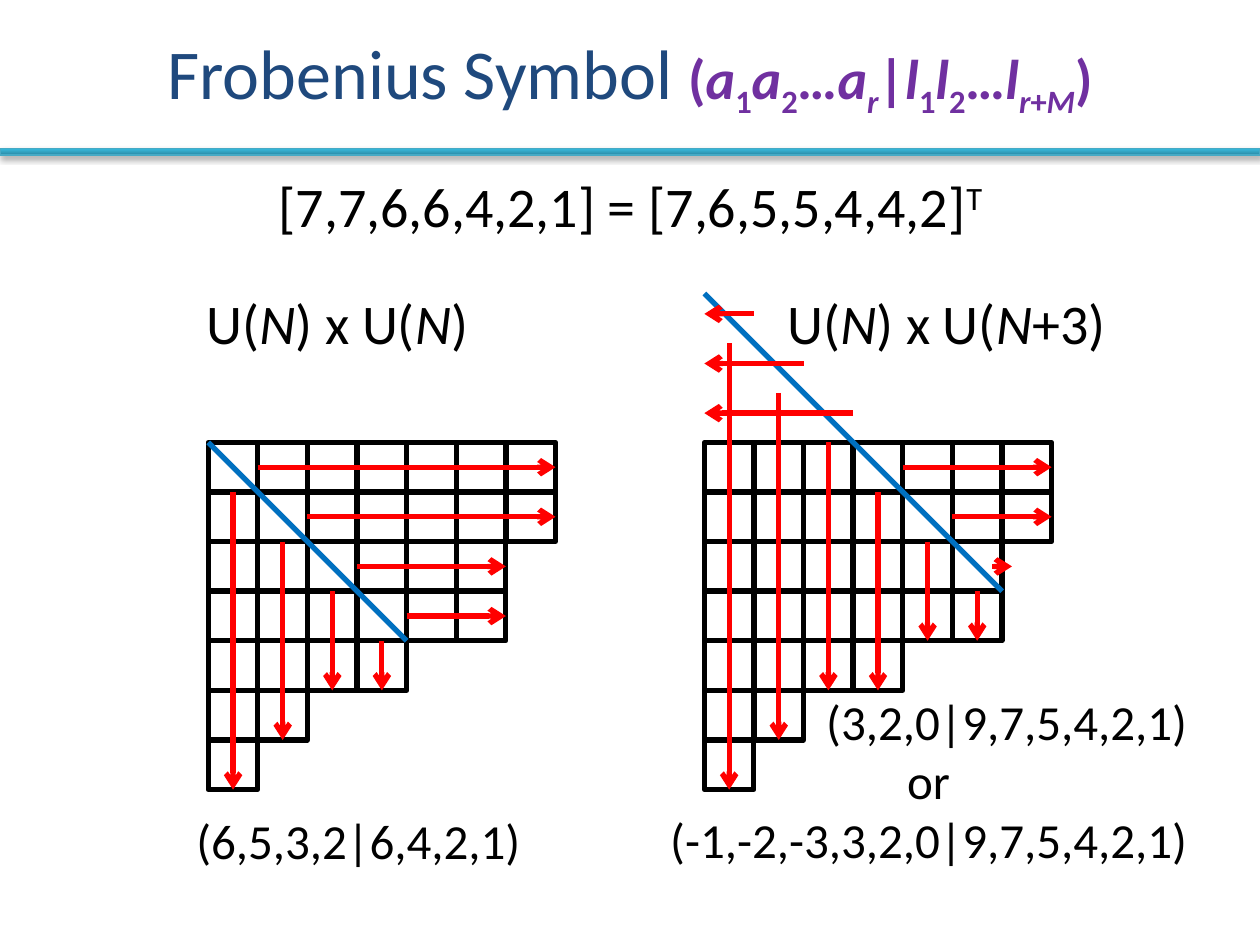
from dataclasses import dataclass
from typing import NamedTuple

import pptx
import pptx.dml.color
import pptx.enum.shapes
import pptx.enum.text
import pptx.oxml
import pptx.oxml.ns
import pptx.util

Pt = pptx.util.Pt
RGB = pptx.dml.color.RGBColor.from_string
ALIGN = pptx.enum.text.PP_ALIGN
NS = pptx.oxml.ns.nsdecls("a")
COLORS = {
    "title": "1F497D", "symbol": "7030A0", "text": "000000", "cell": "000000",
    "diagonal": "0070C0", "arrow": "FF0000", "rule": "46AAC5",
    "rule_dark": "2A88A2", "rule_mid": "37B1D2", "rule_light": "34B4D6",
}
FONT = "Calibri"
CELL = 28.35
ROWS = [7, 7, 6, 6, 4, 2, 1]
COLUMNS = [sum(row > col for row in ROWS) for col in range(ROWS[0])]
TOP, LEFT, BOTTOM, RIGHT = range(4)


class Span(NamedTuple):
    text: str
    italic: bool = False
    baseline: int = 0  # percent


class Line(NamedTuple):
    spans: list
    align: object = ALIGN.LEFT


@dataclass
class Label:
    left: float
    top: float
    width: float
    height: float
    size: float
    lines: list


@dataclass
class Diagram:
    left: float
    top: float
    shift: int  # rows by which the diagonal is raised
    rank: int   # number of arms inside the diagram


def add_span(paragraph, span: Span, size: float, color: str, bold=False) -> None:
    run = paragraph.add_run()
    run.text = span.text
    font = run.font
    font.name, font.size, font.bold, font.italic = FONT, Pt(size), bold, span.italic
    font.color.rgb = RGB(COLORS[color])
    if span.baseline:
        run._r.get_or_add_rPr().set("baseline", str(span.baseline * 1000))


def add_label(slide, label: Label) -> None:
    box = slide.shapes.add_textbox(
        Pt(label.left), Pt(label.top), Pt(label.width), Pt(label.height))
    frame = box.text_frame
    frame.word_wrap = False
    frame.auto_size = pptx.enum.text.MSO_AUTO_SIZE.SHAPE_TO_FIT_TEXT
    for index, line in enumerate(label.lines):
        paragraph = frame.add_paragraph() if index else frame.paragraphs[0]
        paragraph.alignment = line.align
        for span in line.spans:
            add_span(paragraph, span, label.size, "text")


def add_line(slide, start: tuple, end: tuple, color: str, arrow=False):
    line = slide.shapes.add_connector(
        pptx.enum.shapes.MSO_CONNECTOR.STRAIGHT, *(Pt(v) for v in (*start, *end)))
    line.line.color.rgb = RGB(COLORS[color])
    line.line.width = Pt(3)
    properties = line._element.spPr
    if arrow:
        properties.find(pptx.oxml.ns.qn("a:ln")).append(
            pptx.oxml.parse_xml(f'<a:tailEnd {NS} type="arrow"/>'))
    properties.append(pptx.oxml.parse_xml(f"<a:effectLst {NS}/>"))
    return line


def add_diagram(slide, diagram: Diagram) -> None:
    def point(col: float, row: float) -> tuple:
        return diagram.left + col * CELL, diagram.top + row * CELL

    # Cells
    cells = {}
    for row, length in enumerate(ROWS):
        for col in range(length):
            cell = slide.shapes.add_shape(
                pptx.enum.shapes.MSO_SHAPE.RECTANGLE,
                *(Pt(v) for v in (*point(col, row), CELL, CELL)))
            cell.shadow.inherit = False
            cell.fill.background()
            cell.line.color.rgb = RGB(COLORS["cell"])
            cell.line.width = Pt(3)
            cells[row, col] = cell

    # Shifted diagonal
    shift, rank = diagram.shift, diagram.rank
    add_line(slide, point(0, -shift), point(rank + shift, rank), "diagonal")

    # Legs run down from the diagonal
    for col in range(rank + shift):
        first, last = col + 1 - shift, COLUMNS[col]
        leg = add_line(slide, point(col + 0.5, first), point(col + 0.5, last),
                       "arrow", arrow=True)
        if first >= 0:
            leg.begin_connect(cells[first, col], TOP)
        leg.end_connect(cells[last - 1, col], BOTTOM)

    # Arms run along the rows; above the diagram they point left
    for row in range(-shift, rank):
        first, last = row + 1 + shift, ROWS[row] if row >= 0 else 0
        middle = row + (0.5 if row >= 0 else 0.41)
        stub = 0.2 if first == last else 0
        arm = add_line(slide, point(first - stub, middle), point(last + stub, middle),
                       "arrow", arrow=True)
        if row >= 0 and not stub:
            arm.begin_connect(cells[row, first], LEFT)
            arm.end_connect(cells[row, last - 1], RIGHT)


def add_title_rule(slide) -> None:
    rule = slide.shapes.add_shape(
        pptx.enum.shapes.MSO_SHAPE.RECTANGLE, Pt(0), Pt(85), Pt(720), Pt(3.6))
    stops = "".join(
        f'<a:gs pos="{pos}000"><a:srgbClr val="{COLORS[name]}"/></a:gs>'
        for pos, name in ((0, "rule_dark"), (80, "rule_mid"), (100, "rule_light")))
    properties = rule._element.spPr
    properties.prstGeom.addnext(pptx.oxml.parse_xml(
        f'<a:gradFill {NS} rotWithShape="1"><a:gsLst>{stops}</a:gsLst>'
        '<a:lin ang="16200000" scaled="0"/></a:gradFill>'))
    rule.line.color.rgb = RGB(COLORS["rule"])
    rule.line.width = Pt(0.75)
    properties.append(pptx.oxml.parse_xml(
        f'<a:effectLst {NS}><a:outerShdw blurRad="{Pt(3.1)}" dist="{Pt(1.8)}" '
        'dir="5400000" rotWithShape="0"><a:srgbClr val="000000">'
        '<a:alpha val="35000"/></a:srgbClr></a:outerShdw></a:effectLst>'))


def fill_title(title) -> None:
    title.left, title.top, title.width, title.height = Pt(0), Pt(0), Pt(720), Pt(85)
    frame = title.text_frame
    frame.auto_size = pptx.enum.text.MSO_AUTO_SIZE.NONE
    frame.vertical_anchor = pptx.enum.text.MSO_ANCHOR.MIDDLE
    paragraph = frame.paragraphs[0]
    paragraph.alignment = ALIGN.CENTER
    add_span(paragraph, Span("Frobenius Symbol "), 40, "title")

    def sequence(letter: str) -> list:
        return [Span(letter, True), Span("1", False, -25), Span(letter, True),
                Span("2", False, -25), Span("…"), Span(letter, True)]

    symbol = [Span("("), *sequence("a"), Span("r", True, -25), Span("|"),
              *sequence("l"), Span("r", True, -25), Span("+", False, -25),
              Span("M", True, -25), Span(")")]
    for span in symbol:
        add_span(paragraph, span, 32, "symbol", bold=True)


def group_name(ending: str) -> list:
    return [Line([Span("U("), Span("N", True), Span(") x U("), Span("N", True),
                  Span(ending)])]


LABELS = [
    Label(105.1, 459.4, 202.3, 41, 28, [Line([Span("(6,5,3,2|6,4,2,1)")])]),
    Label(371.5, 391.7, 313.9, 108.7, 28, [
        Line([Span("(3,2,0|9,7,5,4,2,1)")], ALIGN.RIGHT),
        Line([Span("or")], ALIGN.CENTER),
        Line([Span("(-1,-2,-3,3,2,0|9,7,5,4,2,1)")], ALIGN.RIGHT)]),
    Label(110.9, 161.3, 165.6, 46, 32, group_name(")")),
    Label(442.8, 161.3, 198, 46, 32, group_name("+3)")),
    Label(149, 94.3, 422.6, 46, 32, [
        Line([Span("[7,7,6,6,4,2,1] = [7,6,5,5,4,4,2]"), Span("T", False, 30)],
             ALIGN.CENTER)]),
]
DIAGRAMS = [Diagram(402.5, 252.8, shift=3, rank=3),
            Diagram(119, 252.8, shift=0, rank=4)]


def main() -> None:
    deck = pptx.Presentation()
    deck.slide_width, deck.slide_height = Pt(720), Pt(540)
    slide = deck.slides.add_slide(deck.slide_layouts[5])
    add_title_rule(slide)
    fill_title(slide.shapes.title)
    for label in LABELS:
        add_label(slide, label)
    for diagram in DIAGRAMS:
        add_diagram(slide, diagram)
    deck.save("out.pptx")


if __name__ == "__main__":
    main()
